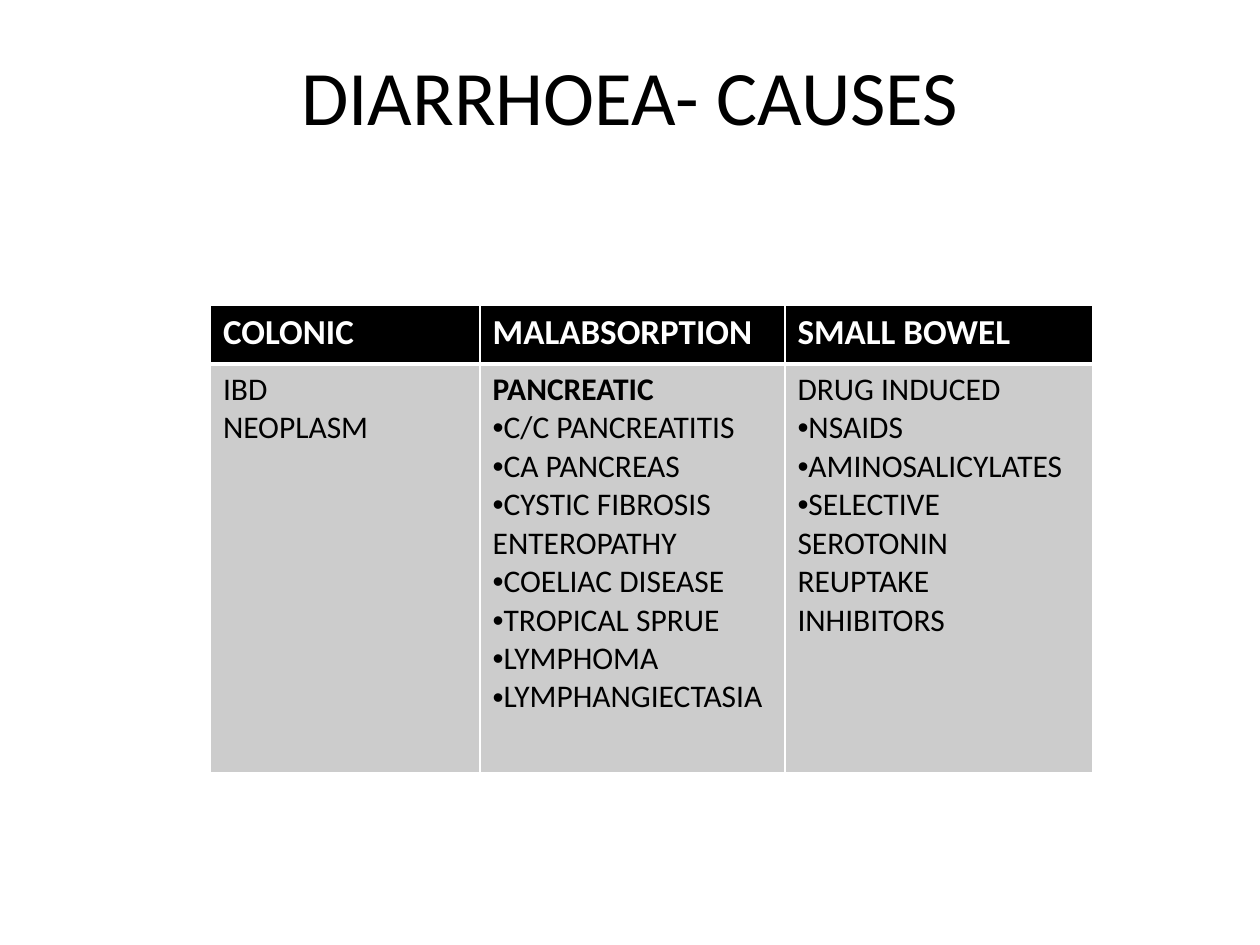
import pptx
import pptx.dml.color
import pptx.enum.text
import pptx.oxml
import pptx.oxml.ns
import pptx.util

Inches = pptx.util.Inches
Pt = pptx.util.Pt
RGB = pptx.dml.color.RGBColor.from_string

THEME = {
    "font": "Calibri",
    "rule": "FFFFFF",
    "title": {"size": Pt(44), "color": "000000", "bold": False},
    "header": {"size": Pt(20), "color": "FFFFFF", "bold": True, "fill": "000000"},
    "body": {"size": Pt(18), "color": "000000", "bold": False, "fill": "CCCCCC"},
}

# A leading bullet marks a list item, a leading * a bold subheading
CAUSES = {
    "COLONIC": ["IBD", "NEOPLASM"],
    "MALABSORPTION": [
        "*PANCREATIC", "•C/C PANCREATITIS", "•CA PANCREAS", "•CYSTIC FIBROSIS",
        "ENTEROPATHY", "•COELIAC DISEASE", "•TROPICAL SPRUE", "•LYMPHOMA",
        "•LYMPHANGIECTASIA",
    ],
    "SMALL BOWEL": [
        "DRUG INDUCED", "•NSAIDS", "•AMINOSALICYLATES",
        "•SELECTIVE SEROTONIN REUPTAKE INHIBITORS",
    ],
}
COLUMN_WIDTHS = [2.14, 2.42, 2.44]
ROW_HEIGHTS = [0.47, 3.24]


def add_text(p, text, style):
    r = p.add_run()
    r.text = text
    for name, value in {"name": THEME["font"], "size": style["size"], "bold": style["bold"]}.items():
        setattr(r.font, name, value)
    r.font.color.rgb = RGB(style["color"])
    return r


def format_cell(cell, fill, widths):
    cell.fill.solid()
    cell.fill.fore_color.rgb = RGB(fill)
    tcPr = cell._tc.get_or_add_tcPr()
    for i, (side, width) in enumerate(widths.items()):
        tcPr.insert(i, pptx.oxml.parse_xml(
            f'<a:ln{side} {pptx.oxml.ns.nsdecls("a")} w="{Pt(width)}"><a:solidFill>'
            f'<a:srgbClr val="{THEME["rule"]}"/></a:solidFill></a:ln{side}>'))


prs = pptx.Presentation()
prs.slide_width, prs.slide_height = Inches(10), Inches(7.5)
s = prs.slides.add_slide(prs.slide_layouts[5])

# Title
sp = s.shapes.title
for name, value in {"left": 0.75, "top": 0.17, "width": 8.5, "height": 1.17}.items():
    setattr(sp, name, Inches(value))
tf = sp.text_frame
tf.vertical_anchor = pptx.enum.text.MSO_ANCHOR.MIDDLE
tf.paragraphs[0].alignment = pptx.enum.text.PP_ALIGN.CENTER
add_text(tf.paragraphs[0], "DIARRHOEA- CAUSES", THEME["title"])

# Table of causes
table = s.shapes.add_table(2, len(CAUSES), Inches(1.67), Inches(2.42),
                           Inches(sum(COLUMN_WIDTHS)), Inches(sum(ROW_HEIGHTS))).table
for column, width in zip(table.columns, COLUMN_WIDTHS):
    column.width = Inches(width)
for row, height in zip(table.rows, ROW_HEIGHTS):
    row.height = Inches(height)

for col, (heading, causes) in enumerate(CAUSES.items()):
    # Header cell, with a thick rule below
    cell = table.cell(0, col)
    format_cell(cell, THEME["header"]["fill"], {"L": 1, "R": 1, "T": 1, "B": 3})
    add_text(cell.text_frame.paragraphs[0], heading, THEME["header"])

    # Body cell
    cell = table.cell(1, col)
    format_cell(cell, THEME["body"]["fill"], {"L": 1, "R": 1, "T": 3, "B": 1})
    tf = cell.text_frame
    for i, cause in enumerate(causes):
        p = tf.add_paragraph() if i else tf.paragraphs[0]
        if cause.startswith("•"):
            pPr = p._p.get_or_add_pPr()
            for tag, attribute, value in [("buFont", "typeface", "Arial"), ("buChar", "char", "•")]:
                pPr.append(pptx.oxml.parse_xml(
                    f'<a:{tag} {pptx.oxml.ns.nsdecls("a")} {attribute}="{value}"/>'))
        r = add_text(p, cause.lstrip("•*"), THEME["body"])
        r.font.bold = cause.startswith("*")

prs.save("out.pptx")
